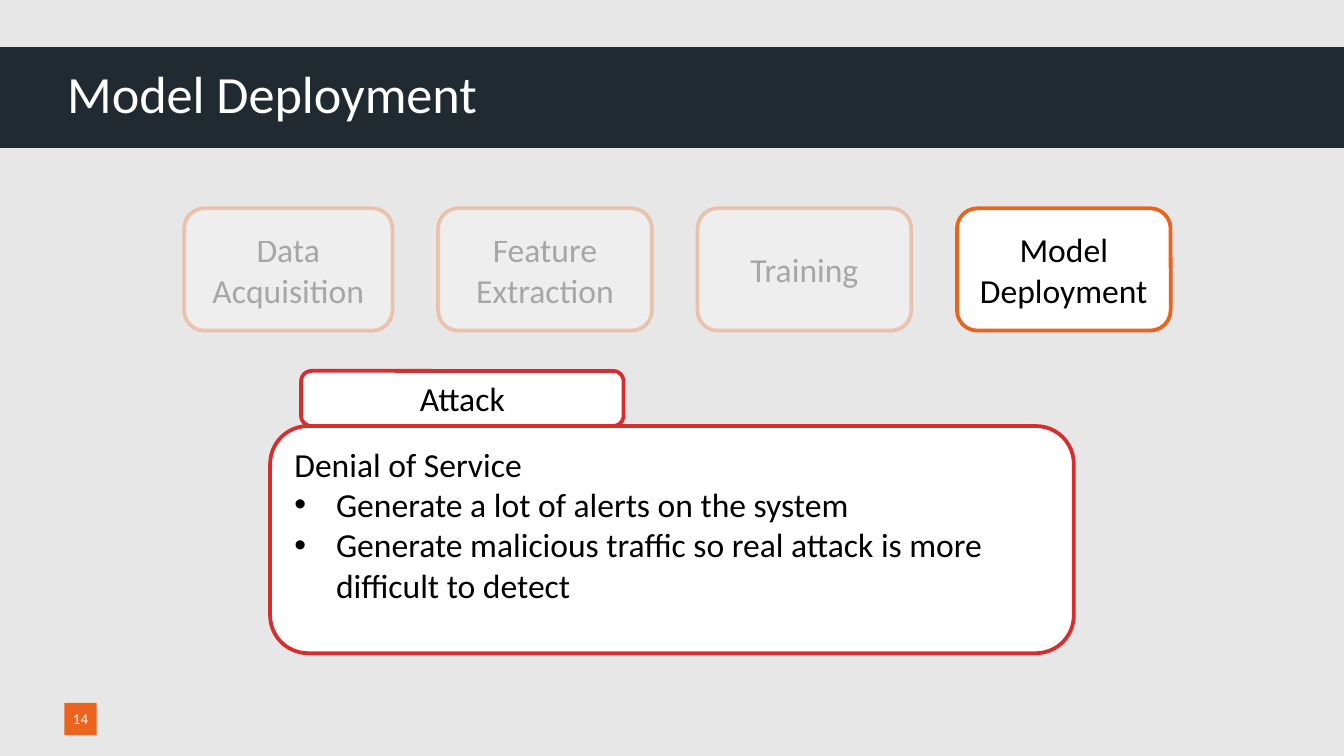
import pptx
import pptx.util
import pptx.dml.color
import pptx.enum.shapes
import pptx.enum.text
import pptx.oxml
import pptx.oxml.ns

Inches = pptx.util.Inches
Pt = pptx.util.Pt
SHAPES = pptx.enum.shapes.MSO_SHAPE
ALIGN = pptx.enum.text.PP_ALIGN
ANCHOR = pptx.enum.text.MSO_ANCHOR

ORANGE, RED, DARK, WHITE, BLACK = "EB641E", "D72D2D", "202A30", "FFFFFF", "000000"


def paint(fill, color):
    fill.solid()
    fill.fore_color.rgb = pptx.dml.color.RGBColor.from_string(color)


def write(shape, text, size=18, color=BLACK, align=ALIGN.CENTER,
          anchor=ANCHOR.MIDDLE, margin=None, bullets_from=None):
    """Write one paragraph per line, bulleted from the line bullets_from on."""
    frame = shape.text_frame
    frame.text = text
    frame.word_wrap = True
    frame.auto_size = pptx.enum.text.MSO_AUTO_SIZE.NONE
    frame.vertical_anchor = anchor
    if margin is not None:
        frame.margin_left = frame.margin_right = margin
        frame.margin_top = frame.margin_bottom = margin
    for index, paragraph in enumerate(frame.paragraphs):
        paragraph.alignment = align
        if bullets_from is not None and index >= bullets_from:
            properties = paragraph._p.get_or_add_pPr()
            properties.set("marL", str(Inches(0.31)))
            properties.set("indent", str(-Inches(0.31)))
            namespace = pptx.oxml.ns.nsdecls("a")
            properties.append(pptx.oxml.parse_xml(f'<a:buFont {namespace} typeface="Arial"/>'))
            properties.append(pptx.oxml.parse_xml(f'<a:buChar {namespace} char="•"/>'))
        for run in paragraph.runs:
            run.font.name = "Calibri"
            run.font.size = Pt(size)
            paint(run.font.fill, color)


presentation = pptx.Presentation()
presentation.slide_width = Inches(10)
presentation.slide_height = Inches(10) * 9 // 16
slide = presentation.slides.add_slide(presentation.slide_layouts[5])
paint(slide.background.fill, "E7E7E7")

# Title on its dark band
title = slide.shapes.title
title.left, title.top = Inches(0.5), Inches(0.31)
title.width, title.height = Inches(7.59), Inches(0.76)
write(title, "Model Deployment", size=28, color=WHITE, align=ALIGN.LEFT, margin=0)

band = slide.shapes.add_shape(SHAPES.RECTANGLE, 0, Inches(0.35), Inches(10), Inches(0.75))
page_number = slide.shapes.add_shape(
    SHAPES.RECTANGLE, Inches(0.48), Inches(5.23), Inches(0.24), Inches(0.24))
for shape, color in [(band, DARK), (page_number, ORANGE)]:
    shape.shadow.inherit = False
    paint(shape.fill, color)
    shape.line.fill.background()
title.element.addprevious(band.element)
write(page_number, "14", size=8, color=WHITE, margin=0)

# Attack panel and pipeline stages: text, left, top, width, height, outline, opacity
attack = "\n".join([
    "Denial of Service",
    "Generate a lot of alerts on the system",
    "Generate malicious traffic so real attack is more difficult to detect",
])
boxes = [
    ("Attack", 2.24, 2.76, 2.4, 0.41, RED, 100),
    (attack, 2.01, 3.17, 5.98, 1.69, RED, 100),
    ("Data Acquisition", 1.37, 1.55, 1.55, 0.91, ORANGE, 30),
]
stages = [("Feature\nExtraction", 30), ("Training", 30), ("Model Deployment", 100)]
for index, (text, opacity) in enumerate(stages):
    boxes.append((text, 3.26 + 1.93 * index, 1.55, 1.59, 0.91, ORANGE, opacity))

for text, left, top, width, height, outline, opacity in boxes:
    box = slide.shapes.add_shape(SHAPES.ROUNDED_RECTANGLE, Inches(left), Inches(top),
                                 Inches(width), Inches(height))
    box.shadow.inherit = False
    paint(box.fill, WHITE)
    paint(box.line.fill, outline)
    box.line.width = Pt(2)
    if text == attack:
        write(box, text, align=ALIGN.LEFT, anchor=ANCHOR.TOP, bullets_from=1)
    else:
        write(box, text)
    if text == "Attack":
        box.adjustments[0] = 0.19
    if opacity < 100:
        for color in box.element.iter(pptx.oxml.ns.qn("a:srgbClr")):
            color.append(pptx.oxml.parse_xml(
                f'<a:alpha {pptx.oxml.ns.nsdecls("a")} val="{opacity * 1000}"/>'))

presentation.save("out.pptx")
